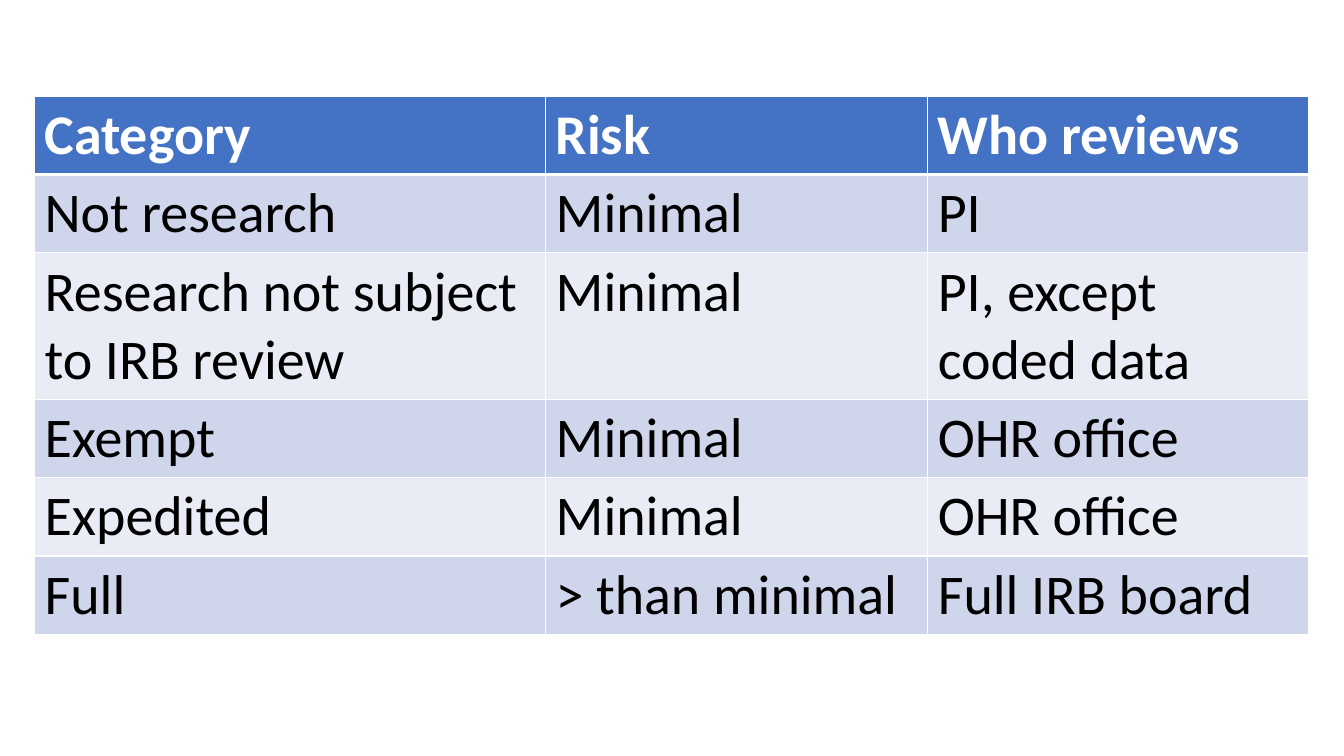
from lxml import etree
from pptx import Presentation
from pptx import util as u
from pptx.dml.color import RGBColor
from pptx.oxml.ns import qn

HEADER, BAND_DARK, BAND_LIGHT = "4472C4", "CFD5EA", "E9EBF5"
WHITE, BLACK = "FFFFFF", "000000"
COLUMN_WIDTHS = [12.88, 9.63, 9.6]
ROW_HEIGHTS = [1.95, 1.95, 3.65, 1.95, 1.95, 1.95]
REVIEW_LEVELS = [
    ("Category", "Risk", "Who reviews"),
    ("Not research", "Minimal", "PI"),
    ("Research not subject to IRB review", "Minimal", "PI, except coded data"),
    ("Exempt", "Minimal", "OHR office"),
    ("Expedited", "Minimal", "OHR office"),
    ("Full", "> than minimal", "Full IRB board"),
]


def rgb(color):
    return RGBColor.from_string(color)


def add_border(cell, side, points):
    tc_pr = cell._tc.get_or_add_tcPr()
    line = etree.SubElement(tc_pr, qn(f"a:ln{side}"), w=str(u.Pt(points)))
    fill = etree.SubElement(line, qn("a:solidFill"))
    etree.SubElement(fill, qn("a:srgbClr"), val=WHITE)


def style_cell(cell, value, row):
    is_header = row == 0
    # Borders go before the fill; the rule below the header is thicker
    for side in "LRTB":
        thick = (row, side) in ((0, "B"), (1, "T"))
        add_border(cell, side, 3 if thick else 1)
    cell.fill.solid()
    band = BAND_DARK if row % 2 else BAND_LIGHT
    cell.fill.fore_color.rgb = rgb(HEADER if is_header else band)

    cell.text = value
    font = cell.text_frame.paragraphs[0].font
    font.name, font.size, font.bold = "Calibri", u.Pt(40), is_header
    font.color.rgb = rgb(WHITE if is_header else BLACK)


def add_review_table(slide, left, top, widths, heights):
    table = slide.shapes.add_table(
        len(heights), len(widths), u.Cm(left), u.Cm(top),
        u.Cm(sum(widths)), u.Cm(sum(heights))).table
    for column, width in zip(table.columns, widths):
        column.width = u.Cm(width)
    for row, height in enumerate(heights):
        table.rows[row].height = u.Cm(height)
        for column, value in enumerate(REVIEW_LEVELS[row]):
            style_cell(table.cell(row, column), value, row)


def main():
    prs = Presentation()
    prs.slide_width, prs.slide_height = u.Cm(33.87), u.Cm(19.05)
    slide = prs.slides.add_slide(prs.slide_layouts[6])
    add_review_table(slide, 0.87, 2.42, COLUMN_WIDTHS, ROW_HEIGHTS)
    prs.save("out.pptx")


if __name__ == "__main__":
    main()
